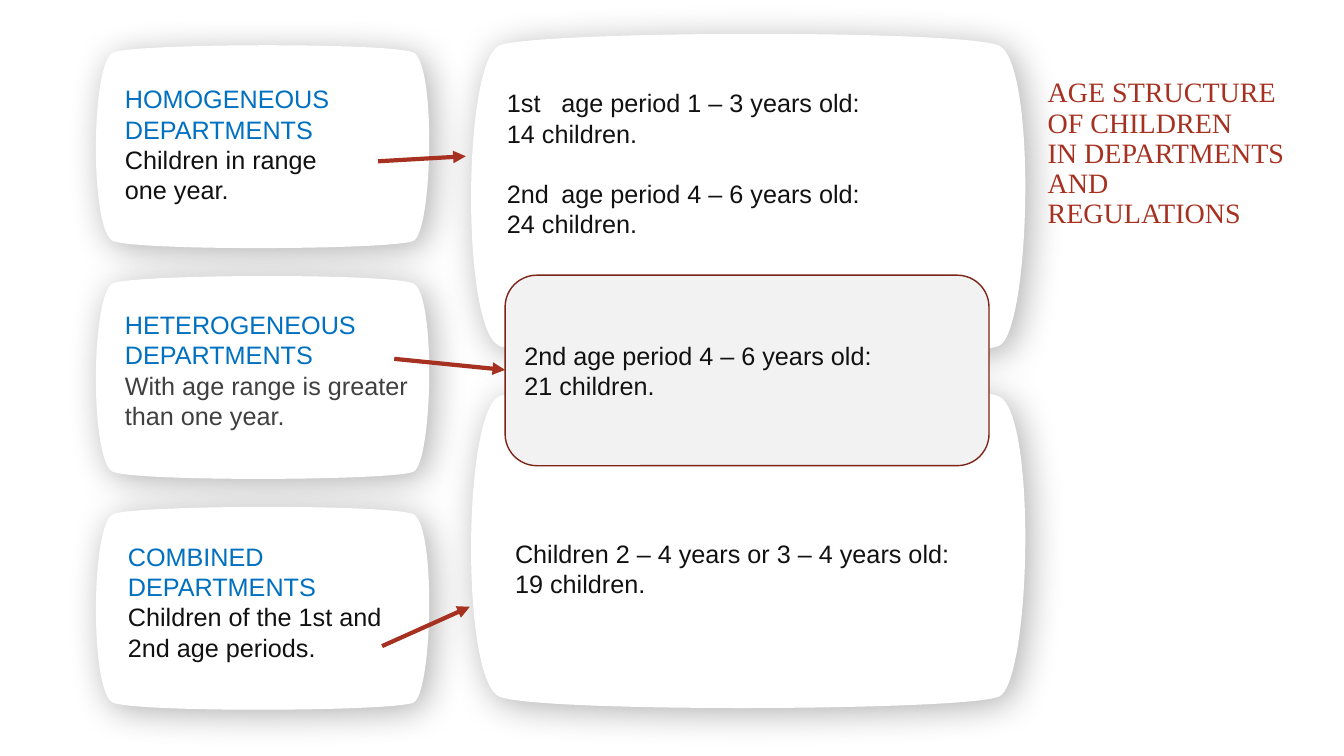
from dataclasses import dataclass

from lxml.etree import SubElement
from pptx import Presentation
from pptx.dml.color import RGBColor
from pptx.enum.shapes import MSO_CONNECTOR as CONNECTOR, MSO_SHAPE as SHAPE
from pptx.enum.text import MSO_ANCHOR as ANCHOR, MSO_AUTO_SIZE as AUTO_SIZE, PP_ALIGN as ALIGN
from pptx.oxml.ns import qn
from pptx.util import Inches, Pt


@dataclass(frozen=True)
class Theme:
    title_font: str = "Times New Roman"
    body_font: str = "Arial"
    title_size: int = 20
    body_size: int = 18
    accent: str = "A63121"
    outline: str = "7B2418"
    heading: str = "0070C0"
    text: str = "111111"
    muted: str = "404040"
    card: str = "FFFFFF"
    panel: str = "F2F2F2"
    shadow: str = "000000"


THEME = Theme()

# Cubic curves of the bulging card, in thousandths of its width and height.
CARD_UNITS = 1000
CARD_CURVES = [
    ((1000, 102), (988, 913), (933, 952)),
    ((877, 995), (131, 1000), (67, 952)),
    ((0, 903), (3, 97), (67, 49)),
    ((128, 5), (863, 0), (933, 49)),
]

DEPARTMENTS = [
    (1.14, 0.78, "HOMOGENEOUS DEPARTMENTS", ["Children in range", "one year."], THEME.text),
    (1.14, 3.02, "HETEROGENEOUS DEPARTMENTS",
     ["With age range is greater than one year."], THEME.muted),
    (1.17, 5.32, "COMBINED DEPARTMENTS",
     ["Children of the 1st and 2nd age periods."], THEME.text),
]
ARROWS = [
    ((3.75, 1.6), (4.62, 1.55)),
    ((3.91, 3.56), (5.01, 3.67)),
    ((3.79, 6.41), (4.66, 6.02)),
]


def rgb(color):
    return RGBColor.from_string(color)


def format_paragraph(p, font, size, color):
    p.alignment = ALIGN.LEFT
    for r in p.runs:
        r.font.name = font
        r.font.size = Pt(size)
        r.font.color.rgb = rgb(color)


def add_tab_stop(p, position):
    tabs = SubElement(p._p.get_or_add_pPr(), qn("a:tabLst"))
    SubElement(tabs, qn("a:tab"), pos=str(Inches(position)), algn="l")


def write_lines(tf, lines, tab_stop=None):
    """Fill a text frame with (text, color) lines, one paragraph each."""
    tf.word_wrap = True
    for i, (text, color) in enumerate(lines):
        p = tf.add_paragraph() if i else tf.paragraphs[0]
        p.text = text
        if tab_stop and "\t" in text:
            add_tab_stop(p, tab_stop)
        format_paragraph(p, THEME.body_font, THEME.body_size, color)


def add_soft_shadow(sp):
    sp.shadow.inherit = False
    effects = sp._element.spPr.find(qn("a:effectLst"))
    shadow = SubElement(effects, qn("a:outerShdw"), blurRad=str(Pt(25)), dist=str(Pt(5)),
                        dir=str(45 * 60000), algn="tl", rotWithShape="0")
    color = SubElement(shadow, qn("a:srgbClr"), val=THEME.shadow)
    SubElement(color, qn("a:alpha"), val="30000")


def bend_sides(sp):
    """Replace the straight sides of a freeform with the card's curves."""
    outline = next(sp._element.iter(qn("a:path")))
    outline.set("w", str(CARD_UNITS))
    outline.set("h", str(CARD_UNITS))
    for child in list(outline):
        outline.remove(child)
    start = CARD_CURVES[-1][-1:]
    for tag, points in [("a:moveTo", start)] + [("a:cubicBezTo", c) for c in CARD_CURVES]:
        segment = SubElement(outline, qn(tag))
        for x, y in points:
            SubElement(segment, qn("a:pt"), x=str(x), y=str(y))
    SubElement(outline, qn("a:close"))


def add_card(slide, left, top, width, height):
    right, bottom = left + width, top + height
    corners = [(right, bottom), (left, bottom), (left, top)]
    builder = slide.shapes.build_freeform(Inches(right), Inches(top))
    builder.add_line_segments([(Inches(x), Inches(y)) for x, y in corners], close=True)
    sp = builder.convert_to_shape()
    bend_sides(sp)
    sp.fill.solid()
    sp.fill.fore_color.rgb = rgb(THEME.card)
    sp.line.fill.background()
    add_soft_shadow(sp)


def add_text(slide, left, top, width, height, lines, tab_stop=None):
    box = slide.shapes.add_textbox(Inches(left), Inches(top), Inches(width), Inches(height))
    write_lines(box.text_frame, lines, tab_stop)
    return box.text_frame


def add_panel(slide, left, top, width, height, lines):
    sp = slide.shapes.add_shape(SHAPE.ROUNDED_RECTANGLE, Inches(left), Inches(top),
                                Inches(width), Inches(height))
    sp.shadow.inherit = False
    sp.fill.solid()
    sp.fill.fore_color.rgb = rgb(THEME.panel)
    sp.line.color.rgb = rgb(THEME.outline)
    sp.line.width = Pt(1)
    sp.text_frame.vertical_anchor = ANCHOR.MIDDLE
    write_lines(sp.text_frame, lines)


def add_arrow(slide, start, end):
    arrow = slide.shapes.add_connector(CONNECTOR.STRAIGHT, *map(Inches, start + end))
    arrow.line.color.rgb = rgb(THEME.accent)
    arrow.line.width = Pt(3)
    props = arrow._element.spPr
    SubElement(props.find(qn("a:ln")), qn("a:tailEnd"), type="triangle")
    SubElement(props, qn("a:effectLst"))


def set_title(slide, text):
    title = slide.shapes.title
    title.left, title.top = Inches(10.29), Inches(0.48)
    title.width, title.height = Inches(2.68), Inches(1.85)
    tf = title.text_frame
    tf.text = text
    tf.word_wrap = True
    tf.auto_size = AUTO_SIZE.NONE
    tf.vertical_anchor = ANCHOR.BOTTOM
    p = tf.paragraphs[0]
    p.line_spacing = 0.9
    format_paragraph(p, THEME.title_font, THEME.title_size, THEME.accent)
    slide.shapes._spTree.append(title._element)  # in front of the card shadows


def main():
    prs = Presentation()
    prs.slide_width, prs.slide_height = Inches(13.33), Inches(7.5)
    slide = prs.slides.add_slide(prs.slide_layouts[5])

    add_card(slide, 4.57, 0.29, 5.72, 3.3)
    for row in range(3):
        add_card(slide, 0.89, 0.42 + 2.29 * row, 3.44, 2.07)
    add_card(slide, 4.57, 3.77, 5.72, 3.3)

    set_title(slide, "AGE STRUCTURE OF CHILDREN\vIN DEPARTMENTS AND REGULATIONS")
    for left, top, heading, body, color in DEPARTMENTS:
        lines = [(heading, THEME.heading)] + [(line, color) for line in body]
        add_text(slide, left, top, 3.05, 1.31, lines)

    periods = add_text(slide, 4.93, 0.82, 5.04, 1.62, [
        ("1st\tage period 1 – 3 years old:", THEME.text),
        ("14 children.", THEME.text),
        ("2nd\tage period 4 – 6 years old:", THEME.text),
        ("24 children.", THEME.text),
    ], tab_stop=0.54)
    periods.paragraphs[2].space_before = Pt(21.5)
    add_text(slide, 5.01, 5.29, 5.41, 0.71, [
        ("Children 2 – 4 years or 3 – 4 years old:", THEME.text),
        ("19 children.", THEME.text),
    ])
    add_panel(slide, 5.01, 2.73, 4.8, 1.89, [
        ("2nd age period 4 – 6 years old:", THEME.text),
        ("21 children.", THEME.text),
    ])
    for start, end in ARROWS:
        add_arrow(slide, start, end)

    prs.save("out.pptx")


if __name__ == "__main__":
    main()
